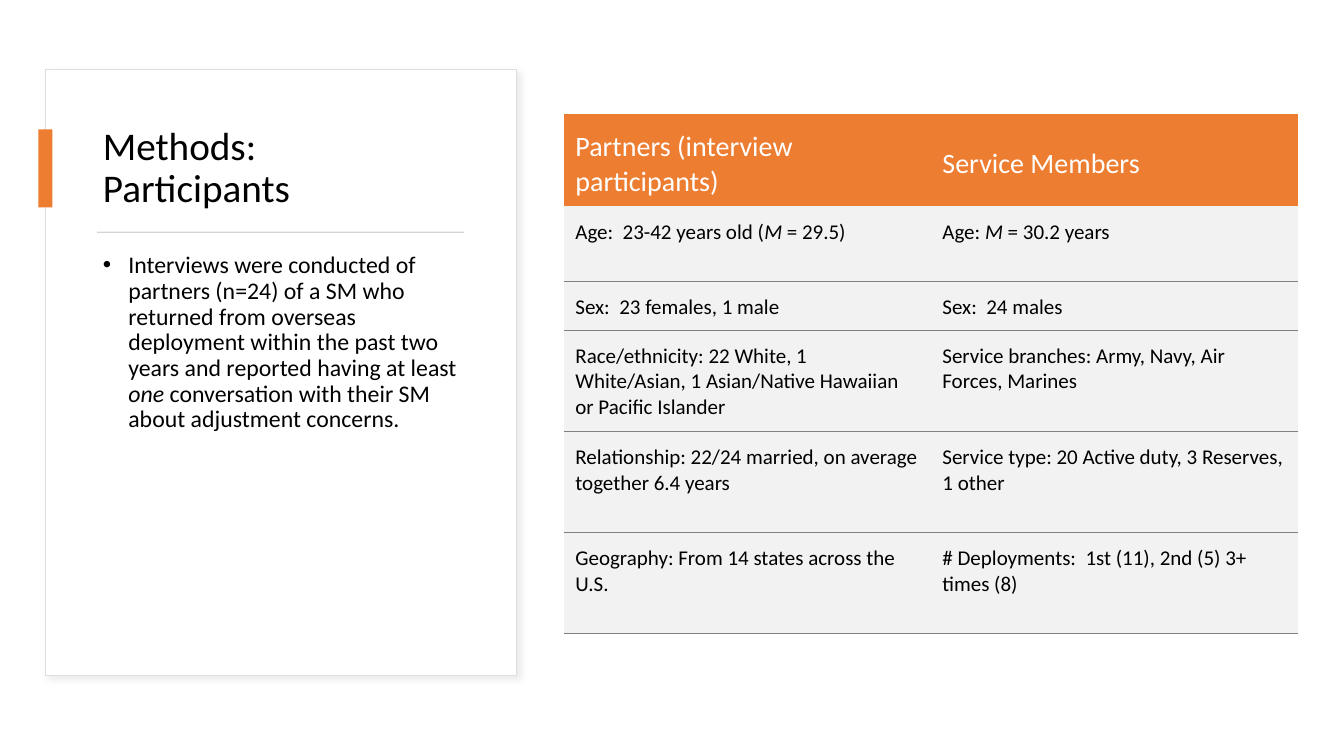
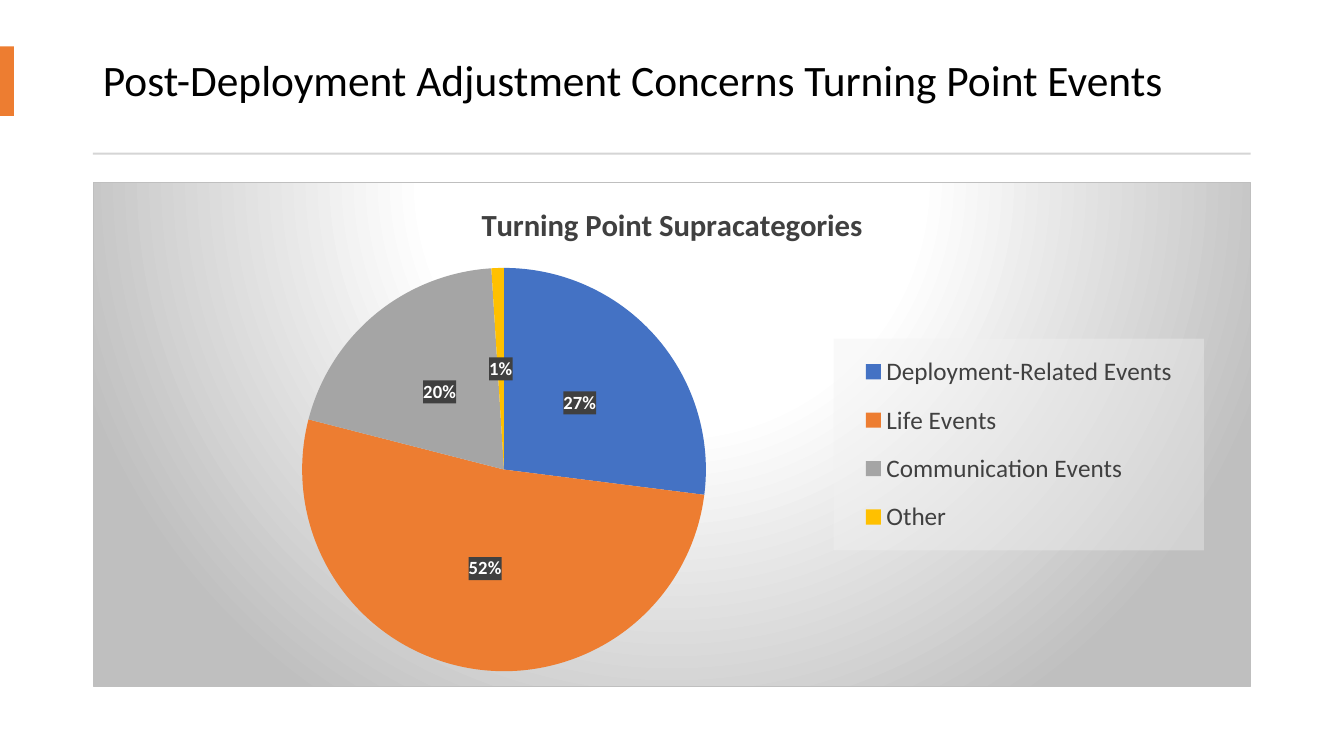
from lxml import etree
from pptx import Presentation
from pptx.chart.data import CategoryChartData
from pptx.dml.color import RGBColor
from pptx.enum.chart import XL_CHART_TYPE as ChartType
from pptx.enum.chart import XL_LABEL_POSITION as LabelPosition
from pptx.enum.chart import XL_LEGEND_POSITION as LegendPosition
from pptx.enum.shapes import MSO_SHAPE as Preset
from pptx.enum.text import MSO_ANCHOR as Anchor
from pptx.enum.text import MSO_AUTO_SIZE as AutoSize
from pptx.enum.text import PP_ALIGN as Align
from pptx.oxml import parse_xml
from pptx.oxml.ns import nsdecls, qn
from pptx.util import Cm, Pt

FONT = "Calibri"
BLACK = RGBColor(0x00, 0x00, 0x00)
WHITE = RGBColor(0xFF, 0xFF, 0xFF)
ORANGE = RGBColor(0xED, 0x7D, 0x31)
BLUE = RGBColor(0x44, 0x72, 0xC4)
GRAY = RGBColor(0xA5, 0xA5, 0xA5)
GOLD = RGBColor(0xFF, 0xC0, 0x00)
INK = RGBColor(0x40, 0x40, 0x40)
RULE_GRAY = RGBColor(0xD5, 0xD5, 0xD5)
CARD_EDGE = RGBColor(0xDE, 0xDE, 0xDE)
SHADOW = RGBColor(0xD9, 0xD9, 0xD9)
CELL_FILL = RGBColor(0xF2, 0xF2, 0xF2)
CELL_EDGE = RGBColor(0x80, 0x80, 0x80)
CHART_EDGE = RGBColor(0xBF, 0xBF, 0xBF)

TITLE_AND_CONTENT, TITLE_ONLY = 1, 5
NO_TABLE_STYLE = "{2D5ABB26-0587-4C30-8999-92F81FD0307C}"

# Every second piece of a text is italic.
INTERVIEWS = [
    "Interviews were conducted of partners (n=24) of a SM who returned from "
    "overseas deployment within the past two years and reported having at least ",
    "one",
    " conversation with their SM about adjustment concerns.",
]
PARTICIPANTS = [
    (["Partners (interview participants)"], ["Service Members"]),
    (["Age:  23-42 years old (", "M", " = 29.5)"], ["Age: ", "M", " = 30.2 years"]),
    (["Sex:  23 females, 1 male"], ["Sex:  24 males"]),
    (["Race/ethnicity: 22 White, 1 White/Asian, 1 Asian/Native Hawaiian or Pacific Islander"],
     ["Service branches: Army, Navy, Air Forces, Marines"]),
    (["Relationship: 22/24 married, on average together 6.4 years"],
     ["Service type: 20 Active duty, 3 Reserves, 1 other"]),
    (["Geography: From 14 states across the U.S."],
     ["# Deployments:  1st (11), 2nd (5) 3+ times (8)"]),
]
ROW_HEIGHTS = [2.32, 1.88, 1.24, 2.55, 2.55, 2.55]
COLUMN_WIDTH = 9.25

CHART_TITLE = "Turning Point Supracategories"
EVENTS = [
    ("Deployment-Related Events", 27, BLUE),
    ("Life Events", 52, ORANGE),
    ("Communication Events", 20, GRAY),
    ("Other", 1, GOLD),
]


def set_font(font, size, color, bold=False):
    font.name, font.size, font.bold = FONT, Pt(size), bold
    font.color.rgb = color


def add_runs(para, pieces, size, color):
    for index, piece in enumerate(pieces):
        span = para.add_run()
        span.text = piece
        set_font(span.font, size, color)
        span.font.italic = index % 2 == 1


def place(shape, box):
    shape.left, shape.top, shape.width, shape.height = map(Cm, box)


def add_box(page, box, fill, edge=None):
    shape = page.shapes.add_shape(Preset.RECTANGLE, *map(Cm, box))
    shape.shadow.inherit = False
    shape.fill.solid()
    shape.fill.fore_color.rgb = fill
    if edge is None:
        shape.line.fill.background()
    else:
        shape.line.color.rgb = edge
        shape.line.width = Pt(0.75)
    return shape


def add_page(deck, layout, title_lines, size, title_box, accent_box, rule_box):
    page = deck.slides.add_slide(deck.slide_layouts[layout])
    title = page.shapes.title
    place(title, title_box)
    frame = title.text_frame
    frame.auto_size = AutoSize.NONE
    frame.vertical_anchor = Anchor.MIDDLE
    para = frame.paragraphs[0]
    para.alignment = Align.LEFT
    para.line_spacing = 0.9
    for index, line in enumerate(title_lines):
        if index:
            para.add_line_break()
        add_runs(para, [line], size, BLACK)
    add_box(page, accent_box, ORANGE)
    add_box(page, rule_box, RULE_GRAY)
    return page


def add_card(page, box):
    card = add_box(page, box, WHITE, CARD_EDGE)
    effects = card.element.spPr.find(qn("a:effectLst"))
    effects.append(parse_xml(
        f'<a:outerShdw {nsdecls("a")} blurRad="{Pt(4)}" dist="{Pt(3)}" dir="2700000" '
        f'algn="tl" rotWithShape="0"><a:srgbClr val="{SHADOW}"><a:alpha val="50000"/>'
        '</a:srgbClr></a:outerShdw>'))
    page.shapes.title.element.addprevious(card.element)


def fill_body(page, box):
    body = page.placeholders[1]
    place(body, box)
    body.text_frame.auto_size = AutoSize.NONE
    para = body.text_frame.paragraphs[0]
    para.line_spacing = 0.9
    para.space_before = Pt(10)
    add_runs(para, INTERVIEWS, 17, BLACK)
    properties = para._p.get_or_add_pPr()
    properties.set("marL", str(Cm(0.64)))
    properties.set("indent", str(Cm(-0.64)))
    bullet = etree.SubElement(properties, qn("a:buChar"))
    bullet.set("char", "•")


def add_participants(page, left, top):
    columns = len(PARTICIPANTS[0])
    frame = page.shapes.add_table(
        len(PARTICIPANTS), columns, Cm(left), Cm(top),
        Cm(columns * COLUMN_WIDTH), Cm(sum(ROW_HEIGHTS)))
    table = frame.table
    table.horz_banding = False
    frame.element.find(".//" + qn("a:tableStyleId")).text = NO_TABLE_STYLE
    for column in table.columns:
        column.width = Cm(COLUMN_WIDTH)
    for row_index, (texts, height) in enumerate(zip(PARTICIPANTS, ROW_HEIGHTS)):
        header = row_index == 0
        table.rows[row_index].height = Cm(height)
        for cell, pieces in zip(table.rows[row_index].cells, texts):
            cell.margin_left = cell.margin_right = Cm(0.28)
            cell.margin_top, cell.margin_bottom = Cm(0.33), Cm(0.13)
            cell.vertical_anchor = Anchor.MIDDLE if header else Anchor.TOP
            cell.fill.solid()
            cell.fill.fore_color.rgb = ORANGE if header else CELL_FILL
            add_runs(cell.text_frame.paragraphs[0], pieces,
                     20 if header else 15, WHITE if header else BLACK)
            if not header:
                cell._tc.get_or_add_tcPr().insert(0, parse_xml(
                    f'<a:lnB {nsdecls("a")} w="{Pt(0.75)}"><a:solidFill>'
                    f'<a:srgbClr val="{CELL_EDGE}"/></a:solidFill></a:lnB>'))


def set_layout(parent, index, left, top, width, height, inner=False):
    for old in parent.findall(qn("c:layout")):
        parent.remove(old)
    target = '<c:layoutTarget val="inner"/>' if inner else ""
    parent.insert(index, parse_xml(
        f'<c:layout {nsdecls("c")}><c:manualLayout>{target}'
        '<c:xMode val="edge"/><c:yMode val="edge"/>'
        f'<c:x val="{left}"/><c:y val="{top}"/><c:w val="{width}"/><c:h val="{height}"/>'
        '</c:manualLayout></c:layout>'))


def chart_fill(content):
    return parse_xml(f'<c:spPr {nsdecls("c", "a")}>{content}</c:spPr>')


def clear_fill(color, percent):
    return chart_fill(f'<a:solidFill><a:srgbClr val="{color}">'
                      f'<a:alpha val="{percent * 1000}"/></a:srgbClr></a:solidFill>')


def add_pie(page, box):
    data = CategoryChartData()
    data.categories = [name for name, _, _ in EVENTS]
    data.add_series(CHART_TITLE, [value for _, value, _ in EVENTS])
    chart = page.shapes.add_chart(ChartType.PIE, *map(Cm, box), data).chart
    set_font(chart.font, 10, BLACK)

    chart.has_title = True
    span = chart.chart_title.text_frame.paragraphs[0].add_run()
    span.text = CHART_TITLE
    set_font(span.font, 22, INK, bold=True)
    chart.chart_title.include_in_layout = False

    plot = chart.plots[0]
    plot.vary_by_categories = True
    for index, (_, _, color) in enumerate(EVENTS):
        fill = plot.series[0].points[index].format.fill
        fill.solid()
        fill.fore_color.rgb = color

    labels = plot.series[0].data_labels
    labels.show_percentage = True
    labels.show_value = False
    labels.number_format = "0%"
    labels.number_format_is_linked = False
    labels.position = LabelPosition.CENTER
    set_font(labels.font, 13.3, WHITE, bold=True)
    label_xml = plot.series[0]._element.find(qn("c:dLbls"))
    label_xml.find(qn("c:txPr")).addprevious(clear_fill(INK, 90))

    chart.has_legend = True
    legend = chart.legend
    legend.position = LegendPosition.RIGHT
    legend.include_in_layout = False
    set_font(legend.font, 18, INK)
    space = chart.element
    legend_xml = space.find(".//" + qn("c:legend"))
    legend_xml.find(qn("c:txPr")).addprevious(clear_fill(CELL_FILL, 39))
    set_layout(legend_xml, 1, 0.64, 0.31, 0.32, 0.42)
    set_layout(space.find(".//" + qn("c:plotArea")), 0, 0.18, 0.17, 0.35, 0.8, inner=True)

    stops = "".join(f'<a:gs pos="{percent * 1000}"><a:srgbClr val="{color}"/></a:gs>'
                    for percent, color in [(0, WHITE), (39, WHITE), (100, CHART_EDGE)])
    space.find(qn("c:chart")).addnext(chart_fill(
        f'<a:gradFill><a:gsLst>{stops}</a:gsLst><a:path path="circle">'
        '<a:fillToRect l="50000" t="-80000" r="50000" b="180000"/></a:path></a:gradFill>'
        f'<a:ln w="{Pt(0.75)}"><a:solidFill><a:srgbClr val="{CHART_EDGE}"/>'
        '</a:solidFill></a:ln>'))


def main():
    deck = Presentation()
    deck.slide_width, deck.slide_height = Cm(33.87), Cm(19.05)

    methods = add_page(deck, TITLE_AND_CONTENT, ["Methods:", "Participants"], 28,
                       (2.34, 2.72, 9.47, 3.07), (0.97, 3.26, 0.35, 1.97),
                       (2.45, 5.84, 9.25, 0.03))
    add_card(methods, (1.15, 1.75, 11.88, 15.27))
    fill_body(methods, (2.34, 6.25, 9.47, 9.88))
    add_participants(methods, 14.22, 2.88)

    events = add_page(deck, TITLE_ONLY,
                      ["Post-Deployment Adjustment Concerns Turning Point Events"], 31,
                      (2.34, 0.69, 29.18, 2.79), (0, 1.17, 0.35, 1.75),
                      (2.34, 3.85, 29.18, 0.05))
    add_pie(events, (2.34, 4.58, 29.18, 12.73))

    deck.save("out.pptx")


if __name__ == "__main__":
    main()
